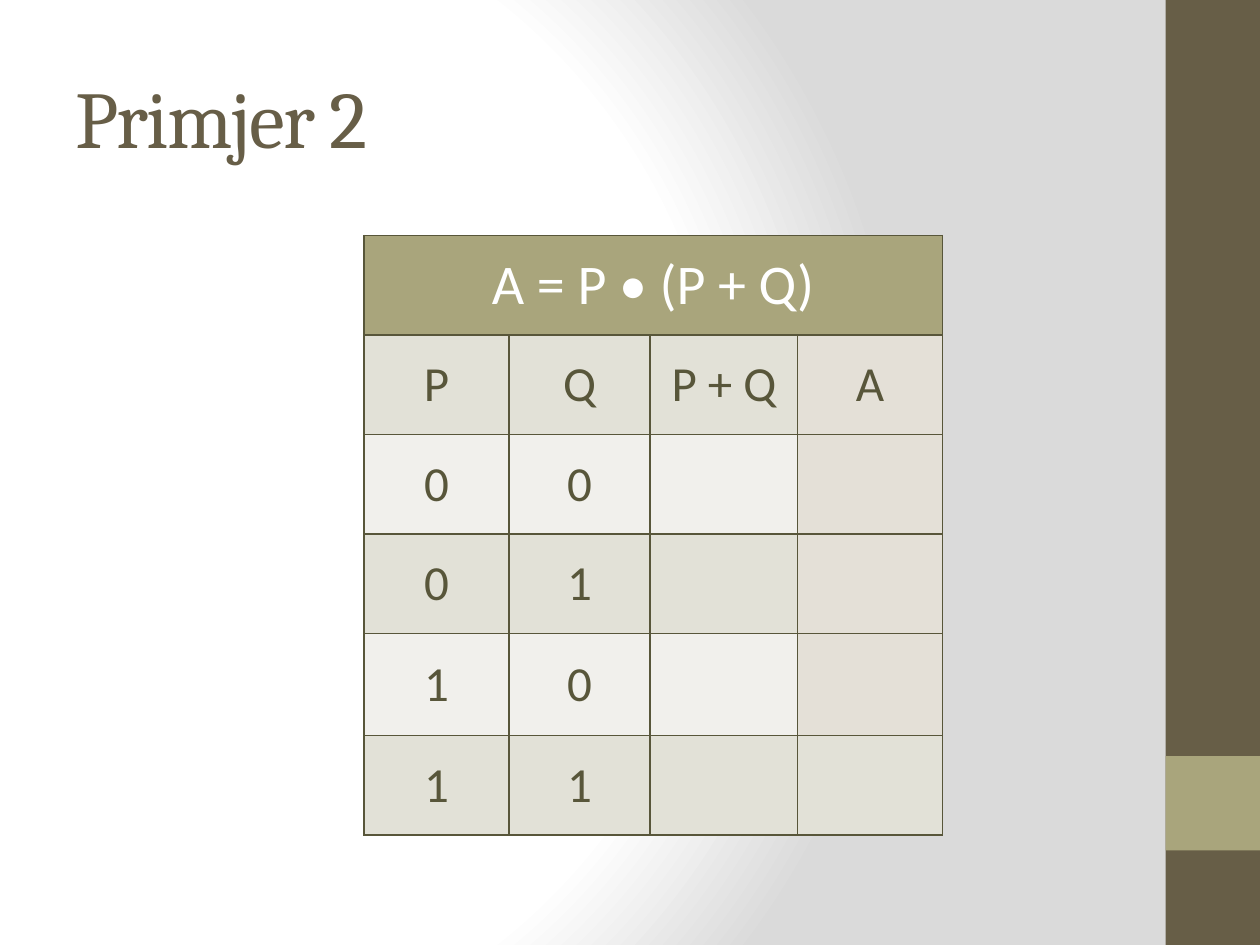
from lxml import etree
from pptx import Presentation
from pptx.dml.color import RGBColor
from pptx.enum.shapes import MSO_SHAPE
from pptx.enum.text import MSO_ANCHOR, PP_ALIGN
from pptx.oxml import parse_xml
from pptx.oxml.ns import nsdecls, qn
from pptx.util import Inches, Pt

RECTANGLE = MSO_SHAPE.RECTANGLE
MIDDLE = MSO_ANCHOR.MIDDLE
LEFT, CENTER = PP_ALIGN.LEFT, PP_ALIGN.CENTER

BROWN = RGBColor(0x67, 0x5E, 0x47)
OLIVE = RGBColor(0xA9, 0xA5, 0x7C)
DARK_OLIVE = RGBColor(0x58, 0x56, 0x3A)
WHITE = RGBColor(0xFF, 0xFF, 0xFF)
GREY = RGBColor(0xDA, 0xDA, 0xDA)
DARK_BAND = RGBColor(0xE2, 0xE1, 0xD7)
LIGHT_BAND = RGBColor(0xF1, 0xF0, 0xEC)
RESULT_BAND = RGBColor(0xE4, 0xE0, 0xD7)

FORMULA = "A = P • (P + Q)"
TRUTH_ROWS = [
    ["P", "Q", "P + Q", "A"],
    ["0", "0", "", ""],
    ["0", "1", "", ""],
    ["1", "0", "", ""],
    ["1", "1", "", ""],
]
COLUMN_WIDTHS = [1.15, 1.12, 1.17, 1.15]
ROW_HEIGHTS = [0.79, 0.79, 0.79, 0.79, 0.81, 0.79]


def set_background(slide):
    """Fill the slide background with a circular gradient."""
    stops = "".join(
        f'<a:gs pos="{position * 1000}"><a:srgbClr val="{color}"/></a:gs>'
        for position, color in [(0, WHITE), (75, WHITE), (100, GREY)]
    )
    background = parse_xml(
        f'<p:bg {nsdecls("p", "a")}><p:bgPr><a:gradFill rotWithShape="1">'
        f'<a:gsLst>{stops}</a:gsLst><a:path path="circle">'
        '<a:fillToRect l="20000" t="50000" r="100000" b="50000"/></a:path>'
        '</a:gradFill><a:effectLst/></p:bgPr></p:bg>'
    )
    slide.element.find(qn("p:cSld")).insert(0, background)


def add_block(slide, left, top, width, height, color):
    """Add a plain filled rectangle."""
    shape = slide.shapes.add_shape(
        RECTANGLE, Inches(left), Inches(top), Inches(width), Inches(height)
    )
    shape.shadow.inherit = False
    shape.fill.solid()
    shape.fill.fore_color.rgb = color
    shape.line.fill.background()


def write_text(frame, text, *, size, color, font="Calibri", align=CENTER, spacing=None):
    """Write one formatted line into a text frame."""
    paragraph = frame.paragraphs[0]
    paragraph.alignment = align
    run = paragraph.add_run()
    run.text = text
    run.font.name = font
    run.font.size = Pt(size)
    run.font.color.rgb = color
    if spacing is not None:
        run.font._element.set("spc", str(spacing * 100))


def add_title(slide, text):
    """Add the slide title."""
    box = slide.shapes.add_textbox(Inches(0.5), Inches(0.3), Inches(8.33), Inches(1.25))
    frame = box.text_frame
    frame.word_wrap = True
    frame.vertical_anchor = MIDDLE
    write_text(frame, text, size=46, color=BROWN, font="Cambria", align=LEFT, spacing=-1)


def set_borders(cell):
    """Draw a one-point line on every side of a cell."""
    properties = cell._tc.get_or_add_tcPr()
    for index, side in enumerate(("lnL", "lnR", "lnT", "lnB")):
        line = etree.Element(qn(f"a:{side}"), w=str(Pt(1)))
        fill = etree.SubElement(line, qn("a:solidFill"))
        etree.SubElement(fill, qn("a:srgbClr"), val=str(DARK_OLIVE))
        properties.insert(index, line)


def format_cell(cell, color):
    """Set the fill, margins, anchor and borders of a cell."""
    cell.fill.solid()
    cell.fill.fore_color.rgb = color
    cell.margin_left = cell.margin_right = Inches(0.07)
    cell.margin_top = cell.margin_bottom = 0
    cell.vertical_anchor = MIDDLE
    set_borders(cell)


def band_color(row, column):
    """Return the fill of a body cell, with the result column set apart."""
    if column == 3 and row < len(TRUTH_ROWS):
        return RESULT_BAND
    return DARK_BAND if row % 2 else LIGHT_BAND


def add_truth_table(slide):
    """Add the truth table below a merged formula row."""
    table = slide.shapes.add_table(
        len(ROW_HEIGHTS), len(COLUMN_WIDTHS), Inches(2.89), Inches(1.87),
        Inches(sum(COLUMN_WIDTHS)), Inches(sum(ROW_HEIGHTS)),
    ).table
    for column, width in zip(table.columns, COLUMN_WIDTHS):
        column.width = Inches(width)
    for row, height in zip(table.rows, ROW_HEIGHTS):
        row.height = Inches(height)

    for cell in table.rows[0].cells:
        format_cell(cell, OLIVE)
    header = table.cell(0, 0)
    header.merge(table.cell(0, len(COLUMN_WIDTHS) - 1))
    write_text(header.text_frame, FORMULA, size=32, color=WHITE)

    for row, values in enumerate(TRUTH_ROWS, start=1):
        for column, value in enumerate(values):
            cell = table.cell(row, column)
            format_cell(cell, band_color(row, column))
            if value:
                write_text(cell.text_frame, value, size=28, color=DARK_OLIVE)


def main():
    """Build and save the slide."""
    presentation = Presentation()
    presentation.slide_width = Inches(10)
    presentation.slide_height = Inches(7.5)
    slide = presentation.slides.add_slide(presentation.slide_layouts[6])
    set_background(slide)
    add_block(slide, 9.25, 0, 0.75, 7.5, BROWN)
    add_block(slide, 9.25, 6, 0.75, 0.75, OLIVE)
    add_title(slide, "Primjer 2")
    add_truth_table(slide)
    presentation.save("out.pptx")


if __name__ == "__main__":
    main()
